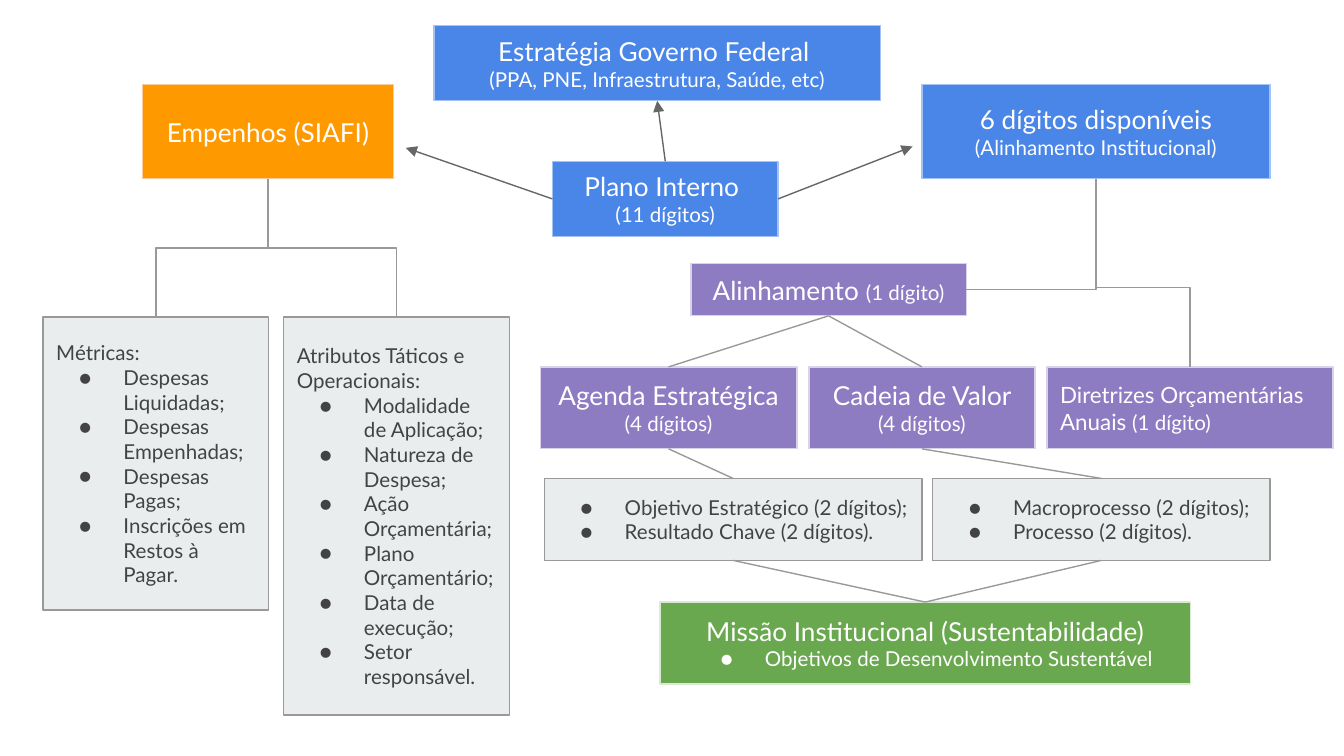
from lxml.etree import SubElement
from pptx import Presentation
from pptx.dml.color import RGBColor
from pptx.enum.shapes import MSO_CONNECTOR, MSO_SHAPE
from pptx.enum.text import MSO_ANCHOR, PP_ALIGN
from pptx.oxml.ns import qn
from pptx.util import Inches, Pt

WHITE = RGBColor(0xFF, 0xFF, 0xFF)
DARK = RGBColor(0x43, 0x43, 0x43)
GRAY = RGBColor(0x99, 0x99, 0x99)
ARROW_GRAY = RGBColor(0x66, 0x66, 0x66)
BLUE = RGBColor(0x4A, 0x86, 0xE8)
LIGHT_BLUE = RGBColor(0xA4, 0xC2, 0xF4)
ORANGE = RGBColor(0xFF, 0x99, 0x00)
LIGHT_ORANGE = RGBColor(0xF9, 0xCB, 0x9C)
PURPLE = RGBColor(0x8E, 0x7C, 0xC3)
LIGHT_PURPLE = RGBColor(0xD9, 0xD2, 0xE9)
GREEN = RGBColor(0x6A, 0xA8, 0x4F)
LIGHT_GREEN = RGBColor(0xD9, 0xEA, 0xD3)
PALE = RGBColor(0xE9, 0xED, 0xEE)

STYLES = {
    "plan": (BLUE, LIGHT_BLUE, WHITE, PP_ALIGN.CENTER),
    "spending": (ORANGE, LIGHT_ORANGE, WHITE, PP_ALIGN.CENTER),
    "alignment": (PURPLE, LIGHT_PURPLE, WHITE, PP_ALIGN.CENTER),
    "guideline": (PURPLE, LIGHT_PURPLE, WHITE, PP_ALIGN.LEFT),
    "detail": (PALE, GRAY, DARK, PP_ALIGN.LEFT),
    "mission": (GREEN, LIGHT_GREEN, WHITE, PP_ALIGN.CENTER),
}
FONT = "Lato"
BIG, MEDIUM, SMALL = 14, 12, 11
BULLET = "●"
SLIDE_WIDTH = 10

BOXES = {
    "strategy": ("plan", (3.23, 0.19, 3.32, 0.56), [
        [("Estratégia Governo Federal ", BIG)],
        [("(PPA, PNE, Infraestrutura, Saúde, etc)", SMALL)]], []),
    "internal plan": ("plan", (4.11, 1.2, 1.68, 0.56), [
        [("Plano Interno ", BIG)], [("(11 dígitos)", SMALL)]], []),
    "commitments": ("spending", (1.06, 0.63, 1.87, 0.7), [
        [("Empenhos (SIAFI)", BIG)]], []),
    "digits": ("plan", (6.86, 0.63, 2.59, 0.7), [
        [("6 dígitos disponíveis ", BIG), ("(Alinhamento Institucional)", SMALL)]], []),
    "alignment": ("alignment", (5.14, 1.96, 2.05, 0.39), [
        [("Alinhamento ", BIG), ("(1 dígito)", SMALL)]], []),
    "agenda": ("alignment", (4.02, 2.73, 1.91, 0.61), [
        [("Agenda Estratégica ", BIG), ("(4 dígitos)", SMALL)]], []),
    "value chain": ("alignment", (6.02, 2.73, 1.68, 0.61), [
        [("Cadeia de Valor ", BIG), ("(4 dígitos)", SMALL)]], []),
    "guidelines": ("guideline", (7.79, 2.73, 2.13, 0.61), [
        [("Diretrizes Orçamentárias Anuais ", MEDIUM), ("(1 dígito)", SMALL)]], []),
    "metrics": ("detail", (0.32, 2.36, 1.68, 2.18), [[("Métricas:", SMALL)]], [
        "Despesas Liquidadas;", "Despesas Empenhadas;", "Despesas Pagas;",
        "Inscrições em Restos à Pagar."]),
    "attributes": ("detail", (2.11, 2.36, 1.68, 2.96), [
        [("Atributos Táticos e Operacionais:", SMALL)]], [
        "Modalidade de Aplicação;", "Natureza de Despesa;", "Ação Orçamentária;",
        "Plano Orçamentário;", "Data de execução;", "Setor responsável."]),
    "objectives": ("detail", (4.05, 3.56, 2.81, 0.61), [], [
        "Objetivo Estratégico (2 dígitos);", "Resultado Chave (2 dígitos)."]),
    "processes": ("detail", (6.94, 3.56, 2.51, 0.61), [], [
        "Macroprocesso (2 dígitos);", "Processo (2 dígitos)."]),
    "mission": ("mission", (4.91, 4.48, 3.95, 0.61), [
        [("Missão Institucional (Sustentabilidade)", BIG)]], [
        "Objetivos de Desenvolvimento Sustentável"]),
}

TOP, LEFT, BOTTOM, RIGHT = range(4)
STRAIGHT_LINKS = [
    ("alignment", "agenda"), ("alignment", "value chain"),
    ("agenda", "objectives"), ("value chain", "processes"),
    ("objectives", "mission"), ("processes", "mission"),
]
BRANCHES = [
    ("commitments", "metrics", 0.5),
    ("commitments", "attributes", 0.5),
    ("digits", "guidelines", 0.58),
]
SIDE_ARROWS = [(LEFT, (3.02, 1.1)), (RIGHT, (6.79, 1.09))]


def apply_format(target, values):
    for name, value in values.items():
        setattr(target, name, value)


def add_run(paragraph, text, size, color):
    run = paragraph.add_run()
    run.text = text
    apply_format(run.font, {"name": FONT, "size": Pt(size)})
    run.font.color.rgb = color


def add_bullet(paragraph, color):
    properties = paragraph._p.get_or_add_pPr()
    properties.set("marL", str(Inches(0.5)))
    properties.set("indent", str(Inches(-0.33)))
    bullet_color = SubElement(properties, qn("a:buClr"))
    SubElement(bullet_color, qn("a:srgbClr"), val=str(color))
    SubElement(properties, qn("a:buSzPts"), val=str(SMALL * 100))
    SubElement(properties, qn("a:buFont"), typeface=FONT)
    SubElement(properties, qn("a:buChar"), char=BULLET)


def add_box(slide, style, place, lines, bullets):
    fill, border, color, alignment = STYLES[style]
    shape = slide.shapes.add_shape(MSO_SHAPE.RECTANGLE, *map(Inches, place))
    shape.shadow.inherit = False
    shape.fill.solid()
    shape.fill.fore_color.rgb = fill
    shape.line.color.rgb = border
    shape.line.width = Pt(0.75)
    frame = shape.text_frame
    margins = {f"margin_{side}": Inches(0.1) for side in ("left", "top", "right", "bottom")}
    apply_format(frame, {"word_wrap": True, "vertical_anchor": MSO_ANCHOR.MIDDLE, **margins})
    rows = [(line, False) for line in lines] + [([(text, SMALL)], True) for text in bullets]
    for index, (runs, bulleted) in enumerate(rows):
        paragraph = frame.add_paragraph() if index else frame.paragraphs[0]
        paragraph.alignment = alignment
        if bulleted:
            add_bullet(paragraph, color)
        for text, size in runs:
            add_run(paragraph, text, size, color)
    return shape


def site(shape, side):
    across = {LEFT: 0, RIGHT: shape.width}.get(side, shape.width // 2)
    down = {TOP: 0, BOTTOM: shape.height}.get(side, shape.height // 2)
    return shape.left + across, shape.top + down


def add_link(slide, start, end, kind=MSO_CONNECTOR.STRAIGHT, color=GRAY, arrow=False):
    connector = slide.shapes.add_connector(kind, *start, *end)
    connector.line.color.rgb = color
    connector.line.width = Pt(0.75)
    if arrow:
        SubElement(connector.line._get_or_add_ln(), qn("a:tailEnd"), type="triangle")
    SubElement(connector._element.spPr, qn("a:effectLst"))
    return connector


def add_branch(slide, start, end, bend):
    connector = add_link(slide, start, end, MSO_CONNECTOR.ELBOW)
    across, down = end[0] - start[0], end[1] - start[1]
    apply_format(connector, {
        "left": (start[0] + end[0] - down) // 2,
        "top": (start[1] + end[1] - abs(across)) // 2,
        "width": down,
        "height": abs(across),
    })
    properties = connector._element.spPr
    transform = properties.find(qn("a:xfrm"))
    transform.attrib.pop("flipH", None)
    transform.set("rot", str((90 if across < 0 else 270) * 60000))
    if across > 0:
        transform.set("flipH", "1")
    geometry = properties.find(qn("a:prstGeom"))
    adjustments = geometry.find(qn("a:avLst"))
    if adjustments is None:
        adjustments = SubElement(geometry, qn("a:avLst"))
    SubElement(adjustments, qn("a:gd"), name="adj1", fmla=f"val {round(bend * 100000)}")


def main():
    presentation = Presentation()
    apply_format(presentation, {
        "slide_width": Inches(SLIDE_WIDTH),
        "slide_height": Inches(SLIDE_WIDTH * 9 / 16),
    })
    slide = presentation.slides.add_slide(presentation.slide_layouts[6])
    boxes = {name: add_box(slide, *content) for name, content in BOXES.items()}

    for upper, lower in STRAIGHT_LINKS:
        connector = add_link(slide, site(boxes[upper], BOTTOM), site(boxes[lower], TOP))
        connector.begin_connect(boxes[upper], BOTTOM)
        connector.end_connect(boxes[lower], TOP)
    for upper, lower, bend in BRANCHES:
        add_branch(slide, site(boxes[upper], BOTTOM), site(boxes[lower], TOP), bend)
    corner = add_link(slide, site(boxes["alignment"], RIGHT), site(boxes["digits"], BOTTOM),
                      MSO_CONNECTOR.ELBOW)
    corner._element.spPr.find(qn("a:prstGeom")).set("prst", "bentConnector2")

    plan = boxes["internal plan"]
    targets = [(side, tuple(map(Inches, point))) for side, point in SIDE_ARROWS]
    targets.append((TOP, site(boxes["strategy"], BOTTOM)))
    for side, target in targets:
        arrow = add_link(slide, site(plan, side), target, color=ARROW_GRAY, arrow=True)
        arrow.begin_connect(plan, side)
    presentation.save("out.pptx")


if __name__ == "__main__":
    main()
